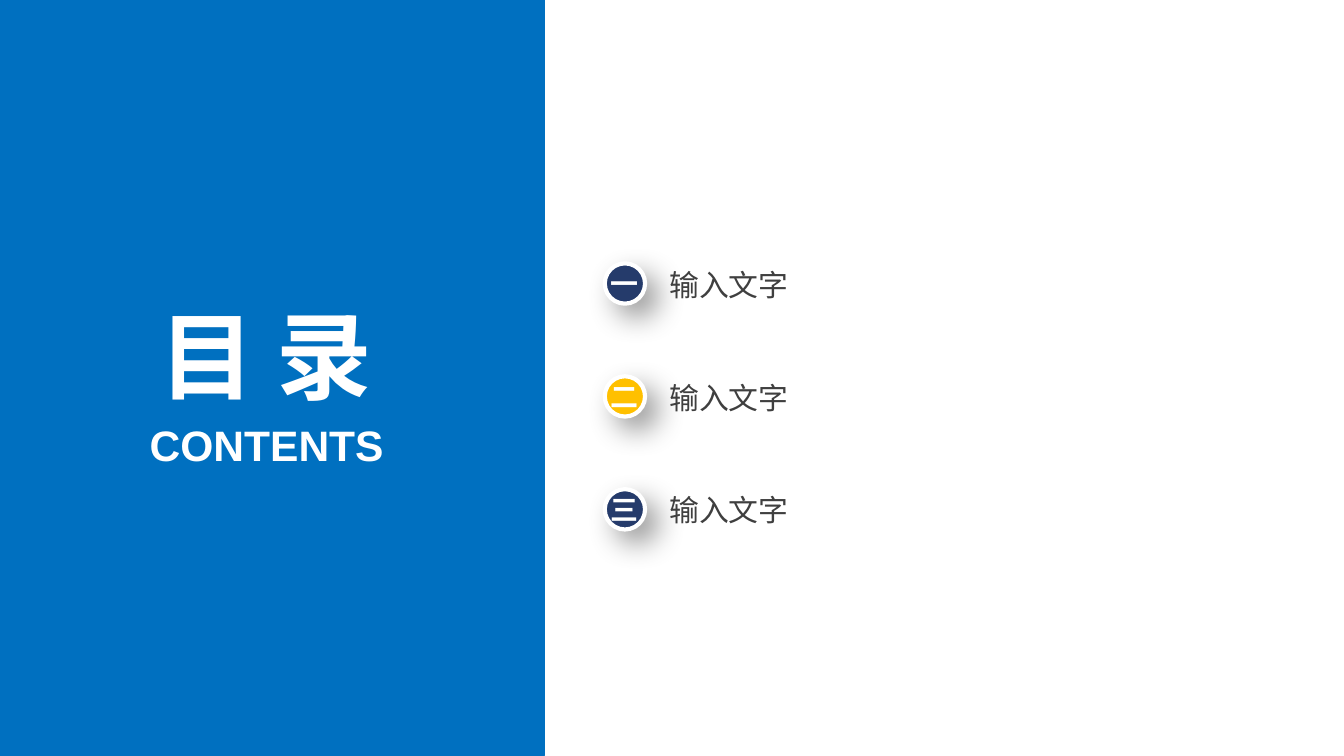
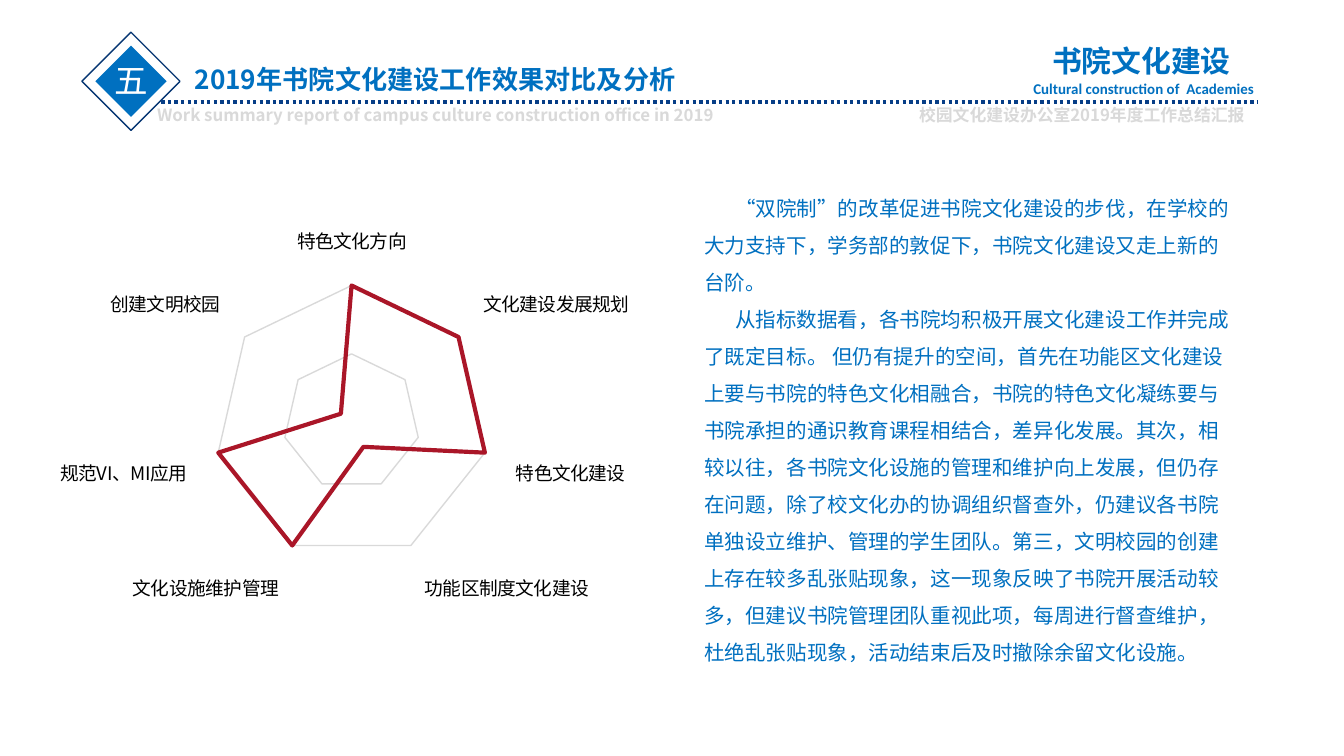
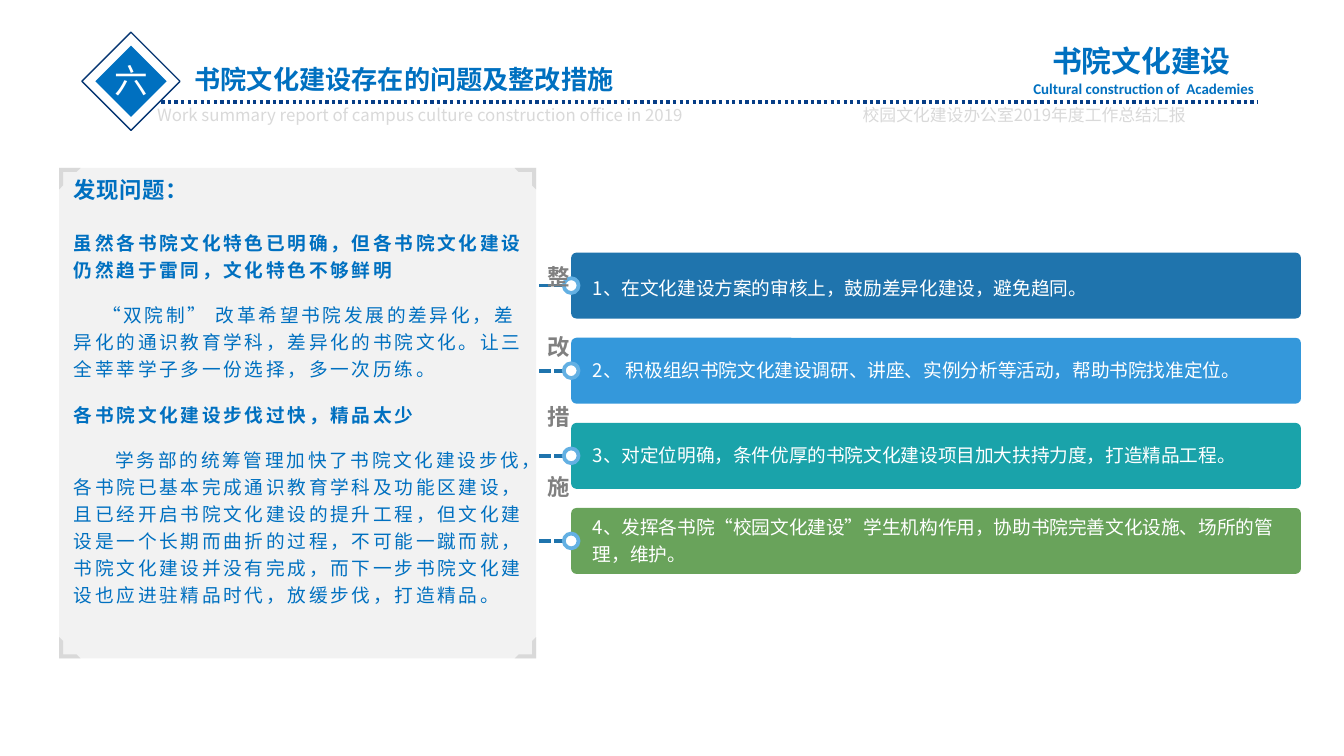
import pptx
import pptx.chart.data
import pptx.dml.color
import pptx.enum.chart
import pptx.enum.dml
import pptx.enum.shapes
import pptx.enum.text
import pptx.oxml
import pptx.oxml.ns
import pptx.util

Inches, Pt = pptx.util.Inches, pptx.util.Pt
SHAPE = pptx.enum.shapes.MSO_SHAPE
ALIGN = pptx.enum.text.PP_ALIGN
ANCHOR = pptx.enum.text.MSO_ANCHOR
DASH = pptx.enum.dml.MSO_LINE


class Theme:
    cjk, arial, calibri = "Noto Sans CJK SC", "Arial", "Calibri"
    blue, navy, gold, white = "0070C0", "253B6B", "FFC000", "FFFFFF"
    pale, panel, grey, ink, black = "D9D9D9", "F2F2F2", "808080", "3F3F3F", "000000"
    frame, rule, red, link, ring = "063672", "073E87", "AA1628", "1F74AD", "63B0E3"
    cover, cover_sub, item, number = 51.2, 22.8, 16, 15
    mark, title, brand, brand_sub, foot = 18, 14, 16, 8, 9
    essay, body, heading = 11, 10, 12


# Content
CONTENTS = [("一", Theme.navy), ("二", Theme.gold), ("三", Theme.navy)]
ITEM_TEXT = "输入文字"

BRAND = "书院文化建设"
BRAND_EN = "Cultural construction of  Academies"
FOOT_EN = "Work summary report of campus culture construction office in 2019"
FOOT_CN = "校园文化建设办公室2019年度工作总结汇报"

RADAR = {
    "特色文化方向": 100,
    "文化建设发展规划": 100,
    "特色文化建设": 100,
    "功能区制度文化建设": 20,
    "文化设施维护管理": 100,
    "规范VI、MI应用": 100,
    "创建文明校园": 10,
}
ESSAY = [
    "“双院制”的改革促进书院文化建设的步伐，在学校的大力支持下，学务部的敦促下，书院文化建设又走上新的台阶。",
    "从指标数据看，各书院均积极开展文化建设工作并完成了既定目标。 但仍有提升的空间，"
    "首先在功能区文化建设上要与书院的特色文化相融合，书院的特色文化凝练要与书院承担的通识教育课程相结合，"
    "差异化发展。其次，相较以往，各书院文化设施的管理和维护向上发展，但仍存在问题，"
    "除了校文化办的协调组织督查外，仍建议各书院单独设立维护、管理的学生团队。"
    "第三，文明校园的创建上存在较多乱张贴现象，这一现象反映了书院开展活动较多，"
    "但建议书院管理团队重视此项，每周进行督查维护，杜绝乱张贴现象，活动结束后及时撤除余留文化设施。",
]

PROBLEM_TITLE = "发现问题："
PROBLEMS = [  # text, bold, first-line indent
    ("虽然各书院文化特色已明确，但各书院文化建设仍然趋于雷同，文化特色不够鲜明", True, 0),
    ("“双院制” 改革希望书院发展的差异化，差异化的通识教育学科，差异化的书院文化。"
     "让三全莘莘学子多一份选择，多一次历练。", False, 0.21),
    ("各书院文化建设步伐过快，精品太少", True, 0),
    ("学务部的统筹管理加快了书院文化建设步伐，各书院已基本完成通识教育学科及功能区建设，"
     "且已经开启书院文化建设的提升工程，但文化建设是一个长期而曲折的过程，不可能一蹴而就，"
     "书院文化建设并没有完成，而下一步书院文化建设也应进驻精品时代，放缓步伐，打造精品。", False, 0.31),
]
MEASURES_LABEL = "整改措施"
MEASURES = [  # text, bar colour, bottom inset
    ("1、在文化建设方案的审核上，鼓励差异化建设，避免趋同。", "1F74AD", 0),
    ("2、 积极组织书院文化建设调研、讲座、实例分析等活动，帮助书院找准定位。", "3498DB", 0.04),
    ("3、对定位明确，条件优厚的书院文化建设项目加大扶持力度，打造精品工程。", "1AA3AA", 0.04),
    ("4、发挥各书院“校园文化建设”学生机构作用，协助书院完善文化设施、场所的管理，维护。",
     "69A35B", 0.04),
]


# Drawing helpers
def rgb(color):
    return pptx.dml.color.RGBColor.from_string(color)


def add_xml(parent, xml):
    ns = pptx.oxml.ns.nsdecls("a")
    parent.append(pptx.oxml.parse_xml(xml.replace(">", f" {ns}>", 1)))


def paint(sp, fill=None, line=None, width=1):
    sp.shadow.inherit = False
    if fill:
        sp.fill.solid()
        sp.fill.fore_color.rgb = rgb(fill)
    else:
        sp.fill.background()
    if line:
        sp.line.color.rgb = rgb(line)
        sp.line.width = Pt(width)
    else:
        sp.line.fill.background()
    return sp


def add_box(shapes, kind, at, fill=None, line=None, width=1):
    return paint(shapes.add_shape(kind, *map(Inches, at)), fill, line, width)


def add_rule(shapes, x1, x2, y, color, width, dash):
    cx = shapes.add_connector(pptx.enum.shapes.MSO_CONNECTOR.STRAIGHT,
                              *map(Inches, (x1, y, x2, y)))
    cx.line.color.rgb = rgb(color)
    cx.line.width = Pt(width)
    cx.line.dash_style = dash
    add_xml(cx._element.spPr, "<a:effectLst></a:effectLst>")


def frame_text(sp, insets=(0.1, 0.05, 0.1, 0.05), anchor=ANCHOR.TOP, wrap=True):
    tf = sp.text_frame
    tf.word_wrap = wrap
    tf.vertical_anchor = anchor
    tf.margin_left, tf.margin_top, tf.margin_right, tf.margin_bottom = map(Inches, insets)
    return tf


def write(p, text, size, color, font=Theme.cjk, bold=False, align=ALIGN.LEFT, spacing=None):
    p.alignment = align
    r = p.add_run()
    r.text = text
    r.font.size, r.font.bold, r.font.name = Pt(size), bold, font
    r.font.color.rgb = rgb(color)
    rPr = r._r.get_or_add_rPr()
    add_xml(rPr, f'<a:ea typeface="{Theme.cjk}"></a:ea>')
    if spacing:
        rPr.set("spc", str(int(spacing * 100)))


def add_text(shapes, at, text, size, color, insets=(0.1, 0.05, 0.1, 0.05),
             anchor=ANCHOR.TOP, wrap=True, **style):
    tf = frame_text(shapes.add_textbox(*map(Inches, at)), insets, anchor, wrap)
    write(tf.paragraphs[0], text, size, color, **style)


def set_tabs(p, stops):
    tabs = "".join(f'<a:tab pos="{Inches(s)}" algn="l"/>' for s in stops)
    add_xml(p._p.get_or_add_pPr(), f"<a:tabLst>{tabs}</a:tabLst>")


def first_indent(p, inches):
    p._p.get_or_add_pPr().set("indent", str(Inches(inches)))


def new_slide(prs):
    return prs.slides.add_slide(prs.slide_layouts[6]).shapes


def add_header(shapes, mark, title, foot_bold, foot_x):
    g = shapes.add_group_shape().shapes
    add_box(g, SHAPE.DIAMOND, (0.71, 0.34, 0.53, 0.53), Theme.blue)
    add_text(g, (0.75, 0.4, 0.45, 0.4), mark, Theme.mark, Theme.white, wrap=False)
    add_box(g, SHAPE.DIAMOND, (0.61, 0.24, 0.73, 0.73), line=Theme.frame, width=0.75)
    add_text(g, (1.35, 0.42, 4.58, 0.34), title, Theme.title, Theme.blue, bold=True)
    add_rule(g, 1.2, 9.36, 0.76, Theme.rule, 1.75, DASH.ROUND_DOT)
    left = 1.07
    tf = frame_text(g.add_textbox(*map(Inches, (left, 0.73, 8.42, 0.25))))
    p = tf.paragraphs[0]
    set_tabs(p, [foot_x - left - 0.1])
    write(p, f"{FOOT_EN}\t{FOOT_CN}", Theme.foot, Theme.pale, bold=foot_bold)
    # Brand at the right
    add_text(shapes, (7.73, 0.27, 1.68, 0.37), BRAND, Theme.brand, Theme.blue, bold=True)
    add_text(shapes, (7.59, 0.54, 1.97, 0.23), BRAND_EN, Theme.brand_sub, Theme.blue,
             font=Theme.calibri, bold=True)


# Slides
def contents_slide(prs):
    shapes = new_slide(prs)
    flush = dict(insets=(0, 0, 0, 0), font=Theme.arial)
    add_box(shapes, SHAPE.RECTANGLE, (-0.06, 0, 4.1, 5.62), Theme.blue, Theme.blue, 2)
    add_text(shapes, (0.96, 2.21, 2.04, 0.86), "目 录", Theme.cover, Theme.white,
             anchor=ANCHOR.MIDDLE, bold=True, align=ALIGN.CENTER, **flush)
    add_text(shapes, (1.08, 3.12, 1.81, 0.38), "CONTENTS", Theme.cover_sub, Theme.white,
             bold=True, align=ALIGN.CENTER, **flush)
    for i, (number, color) in enumerate(CONTENTS):
        top = 1.96 + i * 0.84
        dot = add_box(shapes, SHAPE.OVAL, (4.5, top, 0.3, 0.3), color, Theme.white, 2.25)
        add_xml(dot._element.spPr.find(pptx.oxml.ns.qn("a:effectLst")),
                f'<a:outerShdw blurRad="{Pt(16)}" dist="{Pt(9)}" dir="2700000">'
                f'<a:srgbClr val="{Theme.black}"><a:alpha val="40000"/></a:srgbClr></a:outerShdw>')
        tf = frame_text(dot, (0, 0, 0, 0), ANCHOR.MIDDLE)
        write(tf.paragraphs[0], number, Theme.number, Theme.white, Theme.arial, True, ALIGN.CENTER)
        add_text(shapes, (4.98, top + 0.02, 3.1, 0.27), ITEM_TEXT, Theme.item, Theme.ink,
                 anchor=ANCHOR.MIDDLE, **flush)


def add_radar(shapes):
    data = pptx.chart.data.CategoryChartData()
    data.categories = list(RADAR)
    data.add_series("Series 1", list(RADAR.values()))
    chart = shapes.add_chart(pptx.enum.chart.XL_CHART_TYPE.RADAR,
                             *map(Inches, (0.36, 1.23, 4.41, 3.7)), data).chart
    chart.has_legend = chart.has_title = False
    chart.font.size, chart.font.name = Pt(Theme.body), Theme.cjk
    chart.font.color.rgb = rgb(Theme.black)
    plot = chart.plots[0]
    plot.vary_by_categories = False
    line = plot.series[0].format.line
    line.color.rgb, line.width = rgb(Theme.red), Pt(2.25)
    cats, vals = chart.category_axis, chart.value_axis
    cats.has_major_gridlines = False
    cats.major_tick_mark = pptx.enum.chart.XL_TICK_MARK.NONE
    vals.has_major_gridlines = True
    vals.minimum_scale, vals.maximum_scale, vals.major_unit = 0, 100, 50
    vals.visible = False
    for part in (cats.format.line, vals.major_gridlines.format.line):
        part.color.rgb, part.width = rgb(Theme.pale), Pt(0.75)


def analysis_slide(prs):
    shapes = new_slide(prs)
    add_radar(shapes)
    tf = frame_text(shapes.add_textbox(*map(Inches, (5.24, 1.34, 3.94, 3.91))), (0, 0.03, 0, 0))
    for i, text in enumerate(ESSAY):
        p = tf.add_paragraph() if i else tf.paragraphs[0]
        p.line_spacing = 1.5
        first_indent(p, 0.23)
        write(p, text, Theme.essay, Theme.blue)
    add_header(shapes, "五", "2019年书院文化建设工作效果对比及分析", True, 6.84)


def add_problem_panel(shapes):
    left, top, width, height = 0.44, 1.25, 3.55, 3.65
    add_box(shapes, SHAPE.RECTANGLE, (left, top, width, height), Theme.panel)
    # Corner brackets, mirrored into each corner
    bracket = [(0, 0), (0.16, 0), (0.13, 0.03), (0.03, 0.03), (0.03, 0.13), (0, 0.16)]
    for x, sx in ((left, 1), (left + width, -1)):
        for y, sy in ((top, 1), (top + height, -1)):
            pts = [(Inches(x + sx * dx), Inches(y + sy * dy)) for dx, dy in bracket]
            fb = shapes.build_freeform(*pts[0])
            fb.add_line_segments(pts[1:])
            paint(fb.convert_to_shape(), Theme.pale)
    tf = frame_text(shapes.add_textbox(*map(Inches, (left, 1.35, width, 3.39))), (0.11, 0, 0.09, 0))
    p = tf.paragraphs[0]
    p.line_spacing, p.space_after = 0.8, Pt(13)
    write(p, PROBLEM_TITLE, Theme.heading, Theme.blue, bold=True, spacing=0.3)
    for text, bold, indent in PROBLEMS:
        p = tf.add_paragraph()
        p.line_spacing, p.space_after = 1.2, Pt(10)
        first_indent(p, indent)
        write(p, text, Theme.body, Theme.blue, bold=bold, spacing=1.5)


def measures_slide(prs):
    shapes = new_slide(prs)
    left, bar_h, dot = 4.25, 0.49, 0.11
    tops = [1.88 + i * 1.9 / 3 for i in range(len(MEASURES))]
    for top in tops:
        add_rule(shapes, 3.79, left, top + bar_h / 2, Theme.link, 2, DASH.SQUARE_DOT)
    add_problem_panel(shapes)
    for top, (text, color, inset) in zip(tops, MEASURES):
        bar = add_box(shapes, SHAPE.ROUNDED_RECTANGLE, (left, top, 5.43, bar_h), color)
        bar.adjustments[0] = 0.08
        p = frame_text(bar, (0.15, 0, 0.07, inset), ANCHOR.MIDDLE).paragraphs[0]
        p.line_spacing = 1.2
        write(p, text, Theme.body, Theme.white)
    for top in tops:
        add_box(shapes, SHAPE.OVAL, (left - dot / 2, top + (bar_h - dot) / 2, dot, dot),
                Theme.white, Theme.ring, 2)
    # Vertical label, one character per tab stop
    tf = frame_text(shapes.add_textbox(*map(Inches, (3.9, 1.88, 0.4, 2.42))))
    tf._txBody.bodyPr.set("vert", "eaVert")
    p = tf.paragraphs[0]
    set_tabs(p, [0.52 * i for i in range(1, len(MEASURES_LABEL))])
    write(p, "\t".join(MEASURES_LABEL), Theme.heading, Theme.grey, bold=True)
    add_header(shapes, "六", "书院文化建设存在的问题及整改措施", False, 6.42)


def main():
    prs = pptx.Presentation()
    prs.slide_width = Inches(10)
    prs.slide_height = prs.slide_width * 9 // 16
    contents_slide(prs)
    analysis_slide(prs)
    measures_slide(prs)
    prs.save("out.pptx")


if __name__ == "__main__":
    main()
